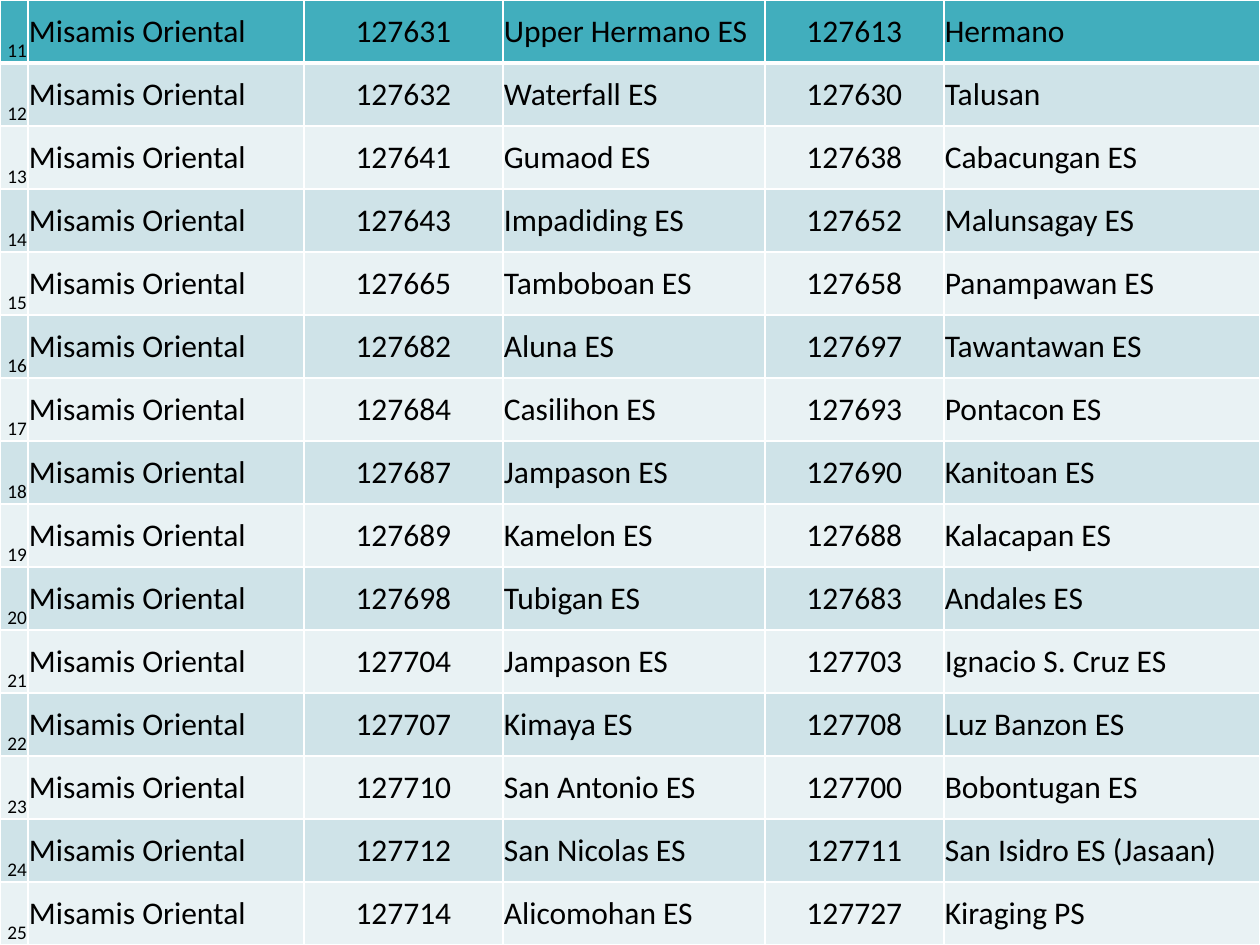
from lxml import etree
from pptx import Presentation
from pptx import util as u
from pptx.dml.color import RGBColor
from pptx.enum import text
from pptx.oxml import ns

BLACK = RGBColor(0x00, 0x00, 0x00)
WHITE = RGBColor(0xFF, 0xFF, 0xFF)
TEAL = RGBColor(0x41, 0xAE, 0xBD)
BANDS = (RGBColor(0xE9, 0xF2, 0xF4), RGBColor(0xCF, 0xE3, 0xE8))

WIDTH, HEIGHT = 1260, 945
COLUMN_WIDTHS = (28, 276, 199, 262, 179, 316)
LEFT, CENTER, RIGHT = text.PP_ALIGN.LEFT, text.PP_ALIGN.CENTER, text.PP_ALIGN.RIGHT
ALIGNMENTS = (RIGHT, LEFT, CENTER, LEFT, CENTER, LEFT)

PROVINCE = "Misamis Oriental"
FIRST_NUMBER = 11
SCHOOLS = (
    ("127631", "Upper Hermano ES", "127613", "Hermano"),
    ("127632", "Waterfall ES", "127630", "Talusan"),
    ("127641", "Gumaod ES", "127638", "Cabacungan ES"),
    ("127643", "Impadiding ES", "127652", "Malunsagay ES"),
    ("127665", "Tamboboan ES", "127658", "Panampawan ES"),
    ("127682", "Aluna ES", "127697", "Tawantawan ES"),
    ("127684", "Casilihon ES", "127693", "Pontacon ES"),
    ("127687", "Jampason ES", "127690", "Kanitoan ES"),
    ("127689", "Kamelon ES", "127688", "Kalacapan ES"),
    ("127698", "Tubigan ES", "127683", "Andales ES"),
    ("127704", "Jampason ES", "127703", "Ignacio S. Cruz ES"),
    ("127707", "Kimaya ES", "127708", "Luz Banzon ES"),
    ("127710", "San Antonio ES", "127700", "Bobontugan ES"),
    ("127712", "San Nicolas ES", "127711", "San Isidro ES (Jasaan)"),
    ("127714", "Alicomohan ES", "127727", "Kiraging PS"),
)


def px(length):
    """Turn px (126 to the inch) into EMU."""
    return u.Emu(round(length * 914400 / 126))


class SlideBuilder:
    """Holds the slide being built and its text style."""

    font_name = "Calibri"
    text_size = 18
    number_size = 11

    def __init__(self, slide):
        self.slide = slide

    def background(self, color):
        fill = self.slide.background.fill
        fill.solid()
        fill.fore_color.rgb = color

    def table(self, rows, left, top, width, height):
        frame = self.slide.shapes.add_table(
            len(rows), len(COLUMN_WIDTHS), px(left), px(top), px(width), px(height))
        table = frame.table
        table.first_row = table.horz_banding = False
        for column, column_width in zip(table.columns, COLUMN_WIDTHS):
            column.width = px(column_width)
        for row_index, values in enumerate(rows):
            table.rows[row_index].height = px(height // len(rows))
            color = BANDS[row_index % 2] if row_index else TEAL
            for column_index, value in enumerate(values):
                cell = table.cell(row_index, column_index)
                self.borders(cell, top=3 if row_index == 1 else 1,
                             bottom=1 if row_index else 3)
                cell.fill.solid()
                cell.fill.fore_color.rgb = color
                self.cell_text(cell, value, ALIGNMENTS[column_index], column_index == 0)

    def cell_text(self, cell, value, alignment, is_number):
        cell.margin_left = cell.margin_right = cell.margin_top = px(1)
        cell.margin_bottom = 0
        cell.vertical_anchor = (
            text.MSO_ANCHOR.BOTTOM if is_number else text.MSO_ANCHOR.MIDDLE)
        paragraph = cell.text_frame.paragraphs[0]
        paragraph.text = value
        paragraph.alignment = alignment
        font = paragraph.runs[0].font
        font.name = self.font_name
        font.size = u.Pt(self.number_size if is_number else self.text_size)
        font.bold = False
        font.color.rgb = BLACK

    def borders(self, cell, top, bottom):
        """Draw white cell borders, widths in points; call before setting the fill."""
        properties = cell._tc.get_or_add_tcPr()
        for side, points in (("L", 1), ("R", 1), ("T", top), ("B", bottom)):
            line = etree.SubElement(properties, ns.qn(f"a:ln{side}"), w=str(u.Pt(points)))
            fill = etree.SubElement(line, ns.qn("a:solidFill"))
            etree.SubElement(fill, ns.qn("a:srgbClr"), val=str(WHITE))


def main():
    presentation = Presentation()
    presentation.slide_width, presentation.slide_height = px(WIDTH), px(HEIGHT)
    blank_layout = presentation.slide_layouts[6]
    builder = SlideBuilder(presentation.slides.add_slide(blank_layout))
    builder.background(BLACK)
    rows = [(str(number), PROVINCE, *school)
            for number, school in enumerate(SCHOOLS, FIRST_NUMBER)]
    builder.table(rows, 0, 0, WIDTH, HEIGHT)
    presentation.save("out.pptx")


if __name__ == "__main__":
    main()
